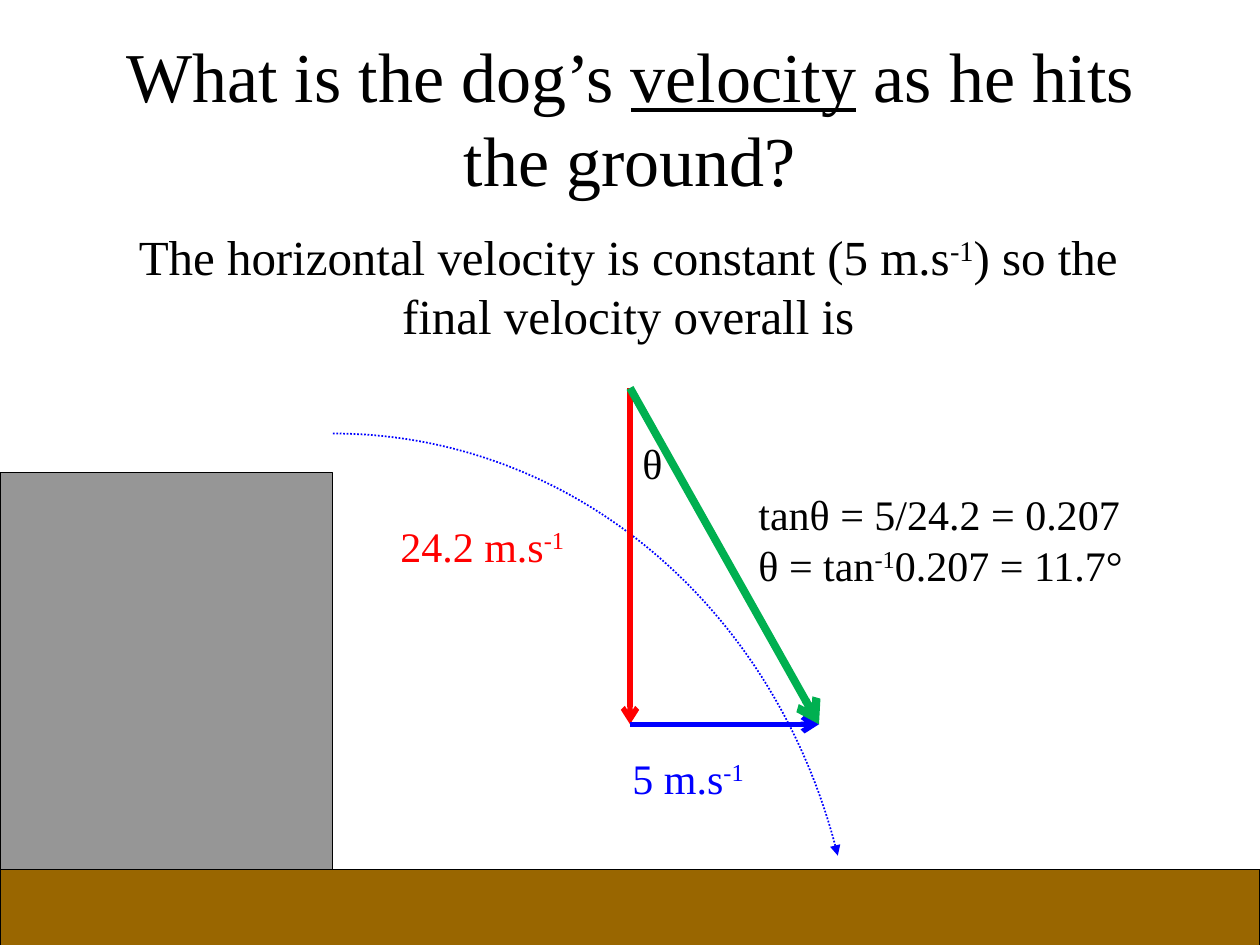
from dataclasses import dataclass

from lxml import etree
from pptx import Presentation
from pptx import util as u
from pptx.dml.color import RGBColor
from pptx.enum import dml, shapes, text
from pptx.oxml.ns import qn

COLOURS = {
    "black": "000000",
    "grey": "969696",
    "earth": "996600",
    "red": "FF0000",
    "blue": "0000FF",
    "green": "00B050",
}
FONT = "Times New Roman"
Point = tuple[float, float]


@dataclass
class Run:
    words: str
    superscript: bool = False
    underline: bool = False


@dataclass
class Label:
    left: float
    top: float
    width: float
    height: float
    lines: list[list[Run]]
    colour: str = "black"
    size: int = 24
    centred: bool = False
    middle: bool = False
    indent: float = 0


@dataclass
class Block:
    left: float
    top: float
    width: float
    height: float
    colour: str


@dataclass
class Vector:
    start: Point
    end: Point
    colour: str
    weight: float


def rgb(colour: str) -> RGBColor:
    return RGBColor.from_string(COLOURS[colour])


def add_label(slide, label: Label) -> None:
    box = slide.shapes.add_textbox(
        u.Cm(label.left), u.Cm(label.top), u.Cm(label.width), u.Cm(label.height)
    )
    frame = box.text_frame
    frame.word_wrap = True
    if label.middle:
        frame.vertical_anchor = text.MSO_ANCHOR.MIDDLE
    for index, line in enumerate(label.lines):
        paragraph = frame.add_paragraph() if index else frame.paragraphs[0]
        if label.centred:
            paragraph.alignment = text.PP_ALIGN.CENTER
        if label.indent:
            paragraph._p.get_or_add_pPr().set("marL", str(u.Cm(label.indent)))
        paragraph.font.name = FONT
        paragraph.font.size = u.Pt(label.size)
        paragraph.font.color.rgb = rgb(label.colour)
        for part in line:
            run = paragraph.add_run()
            run.text = part.words
            if part.underline:
                run.font.underline = True
            if part.superscript:
                run.font._element.set("baseline", "30000")


def add_block(slide, block: Block) -> None:
    rectangle = slide.shapes.add_shape(
        shapes.MSO_SHAPE.RECTANGLE,
        u.Cm(block.left), u.Cm(block.top), u.Cm(block.width), u.Cm(block.height),
    )
    rectangle.shadow.inherit = False
    rectangle.fill.solid()
    rectangle.fill.fore_color.rgb = rgb(block.colour)
    rectangle.line.color.rgb = rgb("black")
    rectangle.line.width = u.Pt(0.75)


def style_arrow(arrow, colour: str, weight: float, head: str) -> None:
    arrow.line.color.rgb = rgb(colour)
    arrow.line.width = u.Pt(weight)
    etree.SubElement(arrow.line._get_or_add_ln(), qn("a:tailEnd"), type=head)


def add_vector(slide, vector: Vector) -> None:
    arrow = slide.shapes.add_connector(
        shapes.MSO_CONNECTOR.STRAIGHT, *map(u.Cm, vector.start + vector.end)
    )
    style_arrow(arrow, vector.colour, vector.weight, "arrow")
    etree.SubElement(arrow._element.spPr, qn("a:effectLst"))


def add_trajectory(slide, start: Point, controls: list[Point], end: Point) -> None:
    builder = slide.shapes.build_freeform(*map(u.Cm, start))
    builder.add_line_segments(
        [(u.Cm(x), u.Cm(y)) for x, y in [*controls, end]], close=False
    )
    curve = builder.convert_to_shape()
    outline = curve._element.spPr.find(".//" + qn("a:path"))
    bezier = etree.SubElement(outline, qn("a:cubicBezTo"))
    for segment in outline.findall(qn("a:lnTo")):
        bezier.append(segment[0])
        outline.remove(segment)
    curve.shadow.inherit = False
    curve.fill.background()
    curve.line.dash_style = dml.MSO_LINE.ROUND_DOT
    style_arrow(curve, "blue", 1, "triangle")


def main() -> None:
    presentation = Presentation()
    presentation.slide_width = u.Cm(25.4)
    presentation.slide_height = u.Cm(19.05)
    slide = presentation.slides.add_slide(presentation.slide_layouts[6])

    minus_one = Run("-1", superscript=True)
    question = Label(
        1.27, 0.76, 22.86, 3.18,
        [[Run("What is the dog’s "), Run("velocity", underline=True),
          Run(" as he hits the ground?")]],
        size=40, centred=True, middle=True,
    )
    explanation = Label(
        1.27, 4.45, 21.84, 12.57,
        [[Run("The horizontal velocity is constant (5 m.s"), minus_one,
          Run(") so the final velocity overall is")]],
        size=28, centred=True, indent=0.95,
    )
    vertical_speed = Label(
        7.82, 10.36, 4.45, 1.27, [[Run("24.2 m.s"), minus_one]], "red"
    )
    horizontal_speed = Label(
        12.5, 15.04, 4.88, 1.27, [[Run("5 m.s"), minus_one]], "blue"
    )
    working = Label(
        15.04, 9.73, 9.53, 2.31,
        [[Run("tanθ = 5/24.2 = 0.207")],
         [Run("θ = tan"), minus_one, Run("0.207 = 11.7°")]],
    )
    angle = Label(12.7, 8.69, 0.84, 1.27, [[Run("θ")]])

    apex, corner, tip = (12.7, 7.82), (12.7, 14.6), (16.51, 14.6)
    cliff = Block(0, 9.53, 6.71, 8, "grey")
    ground = Block(0, 17.53, 25.4, 2, "earth")

    for label in (question, explanation):
        add_label(slide, label)
    for block in (cliff, ground):
        add_block(slide, block)
    add_trajectory(
        slide, (6.71, 8.74), [(11.46, 8.74), (15.65, 12.22)], (16.89, 17.25)
    )
    for vector in (
        Vector(apex, corner, "red", 3),
        Vector(corner, tip, "blue", 3),
    ):
        add_vector(slide, vector)
    for label in (vertical_speed, horizontal_speed):
        add_label(slide, label)
    add_vector(slide, Vector(apex, tip, "green", 4.5))
    for label in (working, angle):
        add_label(slide, label)

    presentation.save("out.pptx")


if __name__ == "__main__":
    main()
